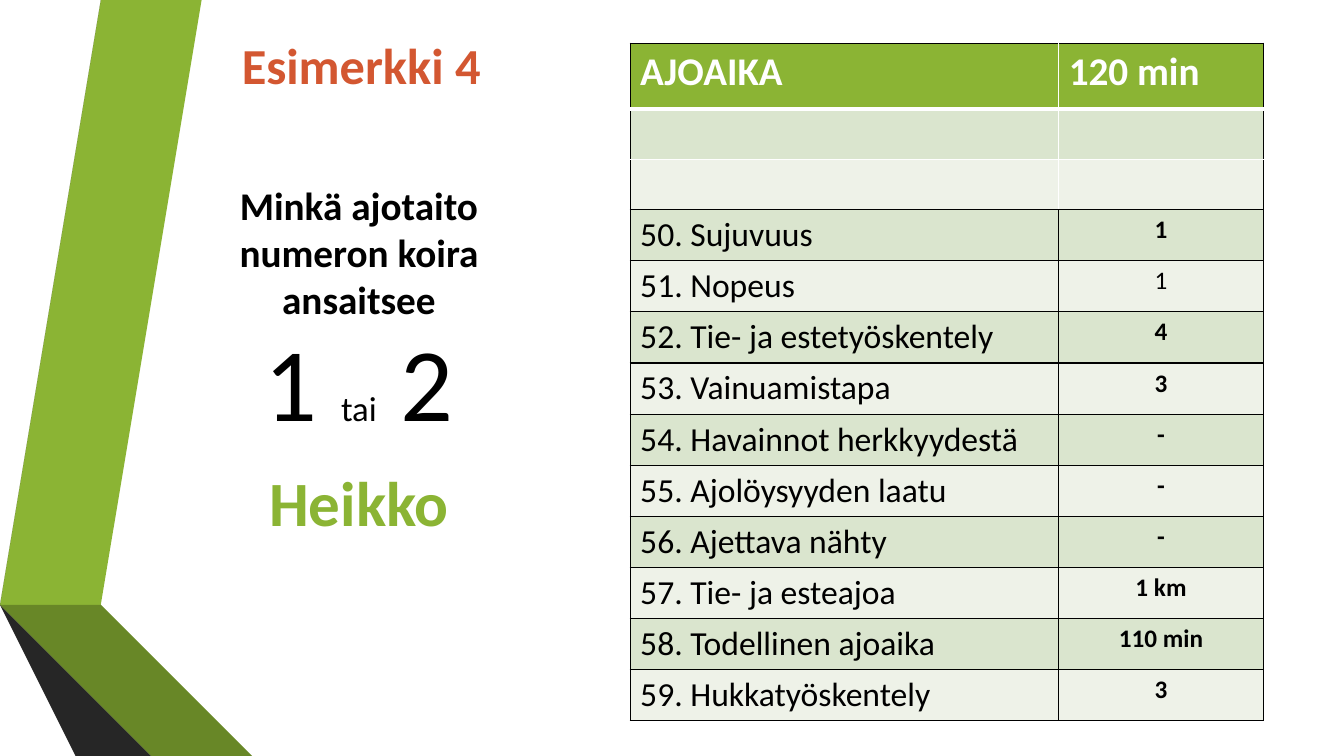
"""Build the Esimerkki 4 slide with its driving-time score table."""
import pptx
import pptx.dml.color
import pptx.enum.text
import pptx.oxml
import pptx.oxml.ns
import pptx.util

Inches, Pt = pptx.util.Inches, pptx.util.Pt
RGB = pptx.dml.color.RGBColor
ALIGN = pptx.enum.text.PP_ALIGN
ANCHOR = pptx.enum.text.MSO_ANCHOR

BLACK = RGB(0x00, 0x00, 0x00)
WHITE = RGB(0xFF, 0xFF, 0xFF)
GREEN = RGB(0x8B, 0xB4, 0x34)
GREEN_DARK = RGB(0x68, 0x87, 0x27)
GREEN_EDGE = RGB(0x46, 0x5A, 0x1A)
GRAY = RGB(0x59, 0x59, 0x59)
GRAY_DARK = RGB(0x40, 0x40, 0x40)
GRAY_EDGE = RGB(0x26, 0x26, 0x26)
ORANGE = RGB(0xD3, 0x57, 0x31)
BAND_DARK = RGB(0xDA, 0xE5, 0xCE)
BAND_LIGHT = RGB(0xEE, 0xF2, 0xE8)

RIBBONS = [
    (GREEN, [(0.5, 5.78), (0.77, 5.83), (1.73, 0), (1.45, 0)]),
    (GRAY, [(1.39, 0), (1.11, 0), (0.16, 5.73), (0.44, 5.77)]),
    (GRAY_EDGE, [(0.16, 5.73), (1.45, 7.5), (1.51, 7.5)]),
    (GREEN_EDGE, [(0.5, 5.79), (2.08, 7.5), (2.14, 7.5)]),
    (GREEN_DARK, [(0.5, 5.79), (2.14, 7.5), (2.83, 7.5), (0.77, 5.83), (0.5, 5.78)]),
    (GRAY_DARK, [(2.02, 7.5), (0.48, 5.83), (0.43, 5.78), (0.44, 5.77),
                 (0.16, 5.73), (1.51, 7.5)]),
]

ROWS = [
    ("AJOAIKA", "120 min"),
    ("", ""),
    ("", ""),
    ("50. Sujuvuus", "1"),
    ("51. Nopeus", "1"),
    ("52. Tie- ja estetyöskentely", "4"),
    ("53. Vainuamistapa", "3"),
    ("54. Havainnot herkkyydestä", "-"),
    ("55. Ajolöysyyden laatu", "-"),
    ("56. Ajettava nähty", "-"),
    ("57. Tie- ja esteajoa", "1 km"),
    ("58. Todellinen ajoaika", "110 min"),
    ("59. Hukkatyöskentely", "3"),
]
HEAD_ROWS = 3
PLAIN_SCORE_ROW = 4


def add_run(p, text, size, color=BLACK, bold=False):
    r = p.add_run()
    r.text = text
    r.font.color.rgb = color
    for name, value in {"name": "Calibri", "size": Pt(size), "bold": bold}.items():
        setattr(r.font, name, value)


def set_format(target, **values):
    for name, value in values.items():
        setattr(target, name, value)


def add_ribbon(slide, color, points):
    builder = slide.shapes.build_freeform(*points[0], scale=Inches(1))
    builder.add_line_segments(points[1:], close=True)
    sp = builder.convert_to_shape()
    sp.shadow.inherit = False
    sp.fill.solid()
    sp.fill.fore_color.rgb = color
    sp.line.fill.background()


def add_text_box(slide, left, top, width, height):
    sp = slide.shapes.add_textbox(*map(Inches, (left, top, width, height)))
    sp.text_frame.word_wrap = True
    return sp.text_frame


def set_border(cell, side, color, width):
    cell._tc.get_or_add_tcPr().append(pptx.oxml.parse_xml(
        f'<a:ln{side} {pptx.oxml.ns.nsdecls("a")} w="{Pt(width)}">'
        f'<a:solidFill><a:srgbClr val="{color}"/></a:solidFill></a:ln{side}>'))


def horizontal_line(index):
    """Return colour and width of the table line above row number index."""
    return {1: (WHITE, 3), 2: (WHITE, 1)}.get(index, (BLACK, 1))


def format_cell(cell, row, col):
    inner = WHITE if row < HEAD_ROWS else BLACK
    set_border(cell, "L", inner if col else BLACK, 1)
    set_border(cell, "R", BLACK if col else inner, 1)
    set_border(cell, "T", *horizontal_line(row))
    set_border(cell, "B", *horizontal_line(row + 1))
    cell.fill.solid()
    cell.fill.fore_color.rgb = GREEN if row == 0 else BAND_DARK if row % 2 else BAND_LIGHT


def add_score_table(slide):
    frame = slide.shapes.add_table(
        len(ROWS), 2, Inches(6.25), Inches(0.43), Inches(6.28), Inches(6.65))
    table = frame.table
    for column, width in zip(table.columns, (4.25, 2.03)):
        column.width = Inches(width)
    for i, texts in enumerate(ROWS):
        table.rows[i].height = Inches(0.5 if i else 0.65)
        for j, text in enumerate(texts):
            cell = table.cell(i, j)
            format_cell(cell, i, j)
            p = cell.text_frame.paragraphs[0]
            if i == 0:
                add_run(p, text, 28, WHITE, True)
            elif text and j == 0:
                add_run(p, text, 24)
            elif text:
                p.alignment = ALIGN.CENTER
                add_run(p, text, 18, bold=i != PLAIN_SCORE_ROW)


def add_question(slide):
    title = slide.shapes.title
    set_format(title, left=Inches(1.62), top=Inches(1.75),
               width=Inches(3.88), height=Inches(1.5))
    tf = title.text_frame
    set_format(tf, vertical_anchor=ANCHOR.BOTTOM, word_wrap=True)
    p = tf.paragraphs[0]
    p.alignment = ALIGN.CENTER
    add_run(p, "Minkä ajotaito numeron koira ansaitsee", 28, bold=True)


def add_choices(slide):
    tf = add_text_box(slide, 1.62, 3.25, 3.88, 2)
    tf.vertical_anchor = ANCHOR.MIDDLE
    choice, name = tf.paragraphs[0], tf.add_paragraph()
    for p, before in ((choice, 15), (name, 9)):
        set_format(p, alignment=ALIGN.CENTER, space_before=Pt(before), space_after=Pt(6))
    for text, size in (("1 ", 74.4), ("tai", 24.8), (" 2", 74.4)):
        add_run(choice, text, size)
    add_run(name, "Heikko", 45, GREEN, True)


def main():
    prs = pptx.Presentation()
    set_format(prs, slide_width=Inches(13.33), slide_height=Inches(7.5))
    slide = prs.slides.add_slide(prs.slide_layouts.get_by_name("Title Only"))
    for color, points in RIBBONS:
        add_ribbon(slide, color, points)
    add_question(slide)
    add_score_table(slide)
    add_choices(slide)
    heading = add_text_box(slide, 2.3, 0.29, 3.37, 0.71)
    add_run(heading.paragraphs[0], "Esimerkki 4", 36, ORANGE, True)
    prs.save("out.pptx")


if __name__ == "__main__":
    main()
